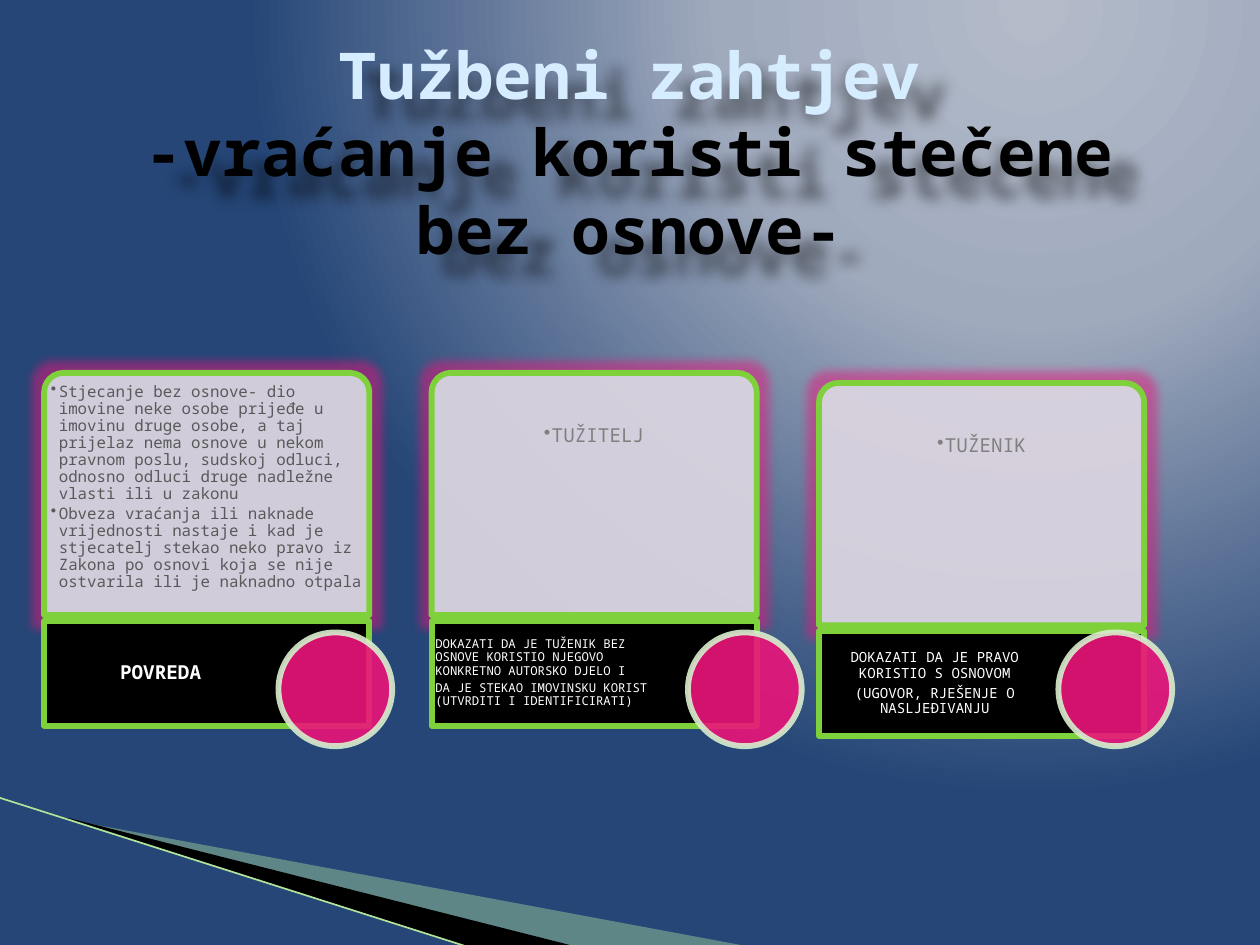
from pptx import Presentation
from pptx.dml.color import RGBColor
from pptx.enum import shapes, text
from pptx.oxml import parse_xml
from pptx.oxml.ns import nsdecls, qn
from pptx.util import Pt

COLORS = {
    "sky": "B3BBC9", "mist": "A0AABD", "navy": "254677",
    "panel": "D9DEE5", "green": "7FD13B", "pale_green": "D8EECE",
    "wedge": "B8E7A1", "edge": "B1E399", "pink": "EA157A",
    "black": "000000", "white": "FFFFFF", "title": "D6ECFF",
    "dark_gray": "595959", "gray": "808080",
}
FONT = "Noto Sans Mono"
SHAPE = shapes.MSO_SHAPE
LEFT, CENTER = text.PP_ALIGN.LEFT, text.PP_ALIGN.CENTER
BULLETS = {"size": 9, "color": "dark_gray", "align": LEFT, "insets": (0.7, 2.9, 0.7, 0.7)}
PARTY = {"size": 11, "color": "gray", "align": CENTER, "insets": (1.4, 43.5, 1.4, 1.4)}
CARDS = [
    {"top": 213.1, "badge": 159.1, "body": BULLETS,
     "lines": ["Stjecanje bez osnove- dio imovine neke osobe prijeđe u imovinu druge osobe, "
               "a taj prijelaz nema osnove u nekom pravnom poslu, sudskoj odluci, odnosno "
               "odluci druge nadležne vlasti ili u zakonu",
               "Obveza vraćanja ili naknade vrijednosti nastaje i kad je stjecatelj stekao "
               "neko pravo iz Zakona po osnovi koja se nije ostvarila ili je naknadno otpala"],
     "caption": ["POVREDA"],
     "foot": {"size": 11, "bold": True, "align": CENTER, "insets": (3.6, 0, 1.4, 0)}},
    {"top": 213.1, "badge": 393.1, "body": PARTY, "lines": ["TUŽITELJ"],
     "caption": ["DOKAZATI DA JE TUŽENIK BEZ OSNOVE KORISTIO NJEGOVO KONKRETNO AUTORSKO DJELO I",
                 "DA JE STEKAO IMOVINSKU KORIST (UTVRDITI I IDENTIFICIRATI)"],
     "foot": {"size": 7, "align": LEFT, "insets": (2.2, 0, 0.7, 0)}},
    {"top": 218.9, "badge": 604.8, "body": PARTY, "lines": ["TUŽENIK"],
     "caption": ["DOKAZATI DA JE PRAVO KORISTIO S OSNOVOM",
                 "(UGOVOR, RJEŠENJE O NASLJEĐIVANJU"],
     "foot": {"size": 8, "align": CENTER, "insets": (2.2, 0, 0.7, 0)}},
]


def rgb(name):
    return RGBColor.from_string(COLORS[name])


def xml(markup):
    head, rest = markup.split(">", 1)
    slash = "/" if head.endswith("/") else ""
    return parse_xml(f"{head.rstrip('/')} {nsdecls('a')}{slash}>{rest}")


def set_alpha(fill_element, percent):
    color = fill_element.find(".//" + qn("a:srgbClr"))
    color.append(xml(f'<a:alpha val="{percent * 1000}"/>'))


def paint(sp, fill, alpha=100, line=None, line_alpha=100):
    sp.shadow.inherit = False
    sp.fill.solid()
    sp.fill.fore_color.rgb = rgb(fill)
    if alpha < 100:
        set_alpha(sp.fill._xPr.find(qn("a:solidFill")), alpha)
    if line is None:
        sp.line.fill.background()
        return
    sp.line.color.rgb = rgb(line)
    sp.line.width = Pt(3.35)
    if line_alpha < 100:
        set_alpha(sp.line._ln, line_alpha)


def add_panel(s, kind, box, **style):
    sp = s.shapes.add_shape(kind, *map(Pt, box))
    paint(sp, **style)
    return sp


def add_run(p, content, size, color, bold=False):
    r = p.add_run()
    r.text = content
    for name, value in {"name": FONT, "size": Pt(size), "bold": bold}.items():
        setattr(r.font, name, value)
    r.font.color.rgb = rgb(color)


def add_frame(s, box, insets, anchor):
    sp = s.shapes.add_textbox(*map(Pt, box))
    tf = sp.text_frame
    values = {"word_wrap": True, "vertical_anchor": anchor}
    values.update(zip(("margin_left", "margin_top", "margin_right", "margin_bottom"),
                      map(Pt, insets)))
    for name, value in values.items():
        setattr(tf, name, value)
    return sp


def add_text(s, box, lines, size, color, align, insets, after, bold=False,
             anchor=text.MSO_ANCHOR.TOP, bullet=False):
    tf = add_frame(s, box, insets, anchor).text_frame
    for i, line in enumerate(lines):
        p = tf.add_paragraph() if i else tf.paragraphs[0]
        for name, value in {"alignment": align, "line_spacing": 0.9,
                            "space_after": Pt(size * after)}.items():
            setattr(p, name, value)
        if bullet:
            pPr = p._p.get_or_add_pPr()
            pPr.set("marL", str(Pt(4.5)))
            pPr.set("indent", str(Pt(-4.5)))
            pPr.append(xml('<a:buChar char="•"/>'))
        add_run(p, line, size, color, bold)


def add_background(s):
    stops = "".join(f'<a:gs pos="{pos * 1000}"><a:srgbClr val="{COLORS[name]}"/></a:gs>'
                    for pos, name in ((0, "sky"), (40, "mist"), (100, "navy")))
    fill = s.background.fill
    fill.solid()
    solid = fill._xPr.find(qn("a:solidFill"))
    fill._xPr.replace(solid, xml(
        f'<a:gradFill rotWithShape="1"><a:gsLst>{stops}</a:gsLst><a:path path="circle">'
        '<a:fillToRect l="65000" t="0" r="0" b="98000"/></a:path></a:gradFill>'))


def add_wedge(s, points, color, alpha=100):
    start, *rest = [(Pt(x), Pt(y)) for x, y in points]
    builder = s.shapes.build_freeform(*start, scale=1.0)
    builder.add_line_segments(rest, close=True)
    paint(builder.convert_to_shape(), color, alpha)


def add_corner(s, box):
    x, y, w, h = box
    add_wedge(s, [(x + 40, y + 12.7), (x + 429, y + h), (x + 329, y + h), (x + 40, y + 12)],
              "wedge", 40)
    add_wedge(s, [(x + 39, y + 11.5), (x + 330, y + h), (x + 268.5, y + h), (x + 39.5, y + 12)],
              "black")
    edge = s.shapes.add_connector(shapes.MSO_CONNECTOR.STRAIGHT,
                                  *map(Pt, (x, y, x + w, y + h)))
    edge.line.color.rgb = rgb("edge")
    edge.line.width = Pt(0.95)
    edge._element.spPr.append(xml("<a:effectLst/>"))


def add_card(s, box, card):
    x, y, w, h = box
    body_h, foot_h = 138.4, 59.8
    foot_y = y + h - foot_h
    body = add_panel(s, SHAPE.ROUND_2_SAME_RECTANGLE, (x, y, w, body_h),
                     fill="panel", alpha=90, line="green")
    body.adjustments[0], body.adjustments[1] = 0.08, 0
    body._element.spPr.find(qn("a:effectLst")).append(xml(
        f'<a:glow rad="{Pt(11)}"><a:srgbClr val="{COLORS["pink"]}">'
        '<a:alpha val="50000"/></a:srgbClr></a:glow>'))
    add_text(s, (x + 3.2, y + 3.2, w - 6.4, body_h - 3.2), card["lines"],
             after=0.15, bullet=True, **card["body"])
    add_panel(s, SHAPE.RECTANGLE, (x, foot_y, w, foot_h), fill="black", line="green")
    add_text(s, (x, foot_y, 131, foot_h), card["caption"], color="white", after=0.35,
             anchor=text.MSO_ANCHOR.MIDDLE, **card["foot"])
    add_panel(s, SHAPE.OVAL, (card["badge"], 361.4, 65, 65),
              fill="pink", alpha=90, line="pale_green", line_alpha=90)


def add_title(s, box):
    sp = add_frame(s, box, (7.2, 3.6, 7.2, 3.6), text.MSO_ANCHOR.MIDDLE)
    p = sp.text_frame.paragraphs[0]
    p.alignment = CENTER
    add_run(p, "Tužbeni zahtjev", 36.9, "title", True)
    p.add_line_break()
    add_run(p, "-vraćanje koristi stečene bez osnove-", 36.9, "black", True)
    sp._element.spPr.append(xml(
        f'<a:effectLst><a:outerShdw blurRad="{Pt(8)}" dist="{Pt(18)}" dir="2400000" '
        'algn="tl" rotWithShape="0"><a:srgbClr val="000000"><a:alpha val="50000"/>'
        '</a:srgbClr></a:outerShdw></a:effectLst>'))


def main():
    prs = Presentation()
    prs.slide_width, prs.slide_height = Pt(720), Pt(540)
    s = prs.slides.add_slide(prs.slide_layouts[6])
    add_background(s)
    add_corner(s, (-0.5, 455.8, 267.6, 85.2))
    for i, card in enumerate(CARDS):
        add_card(s, (25.2 + 221.4 * i, card["top"], 185.8, 201.6), card)
    add_title(s, (36, 21.6, 648, 129.6))
    prs.save("out.pptx")


if __name__ == "__main__":
    main()
